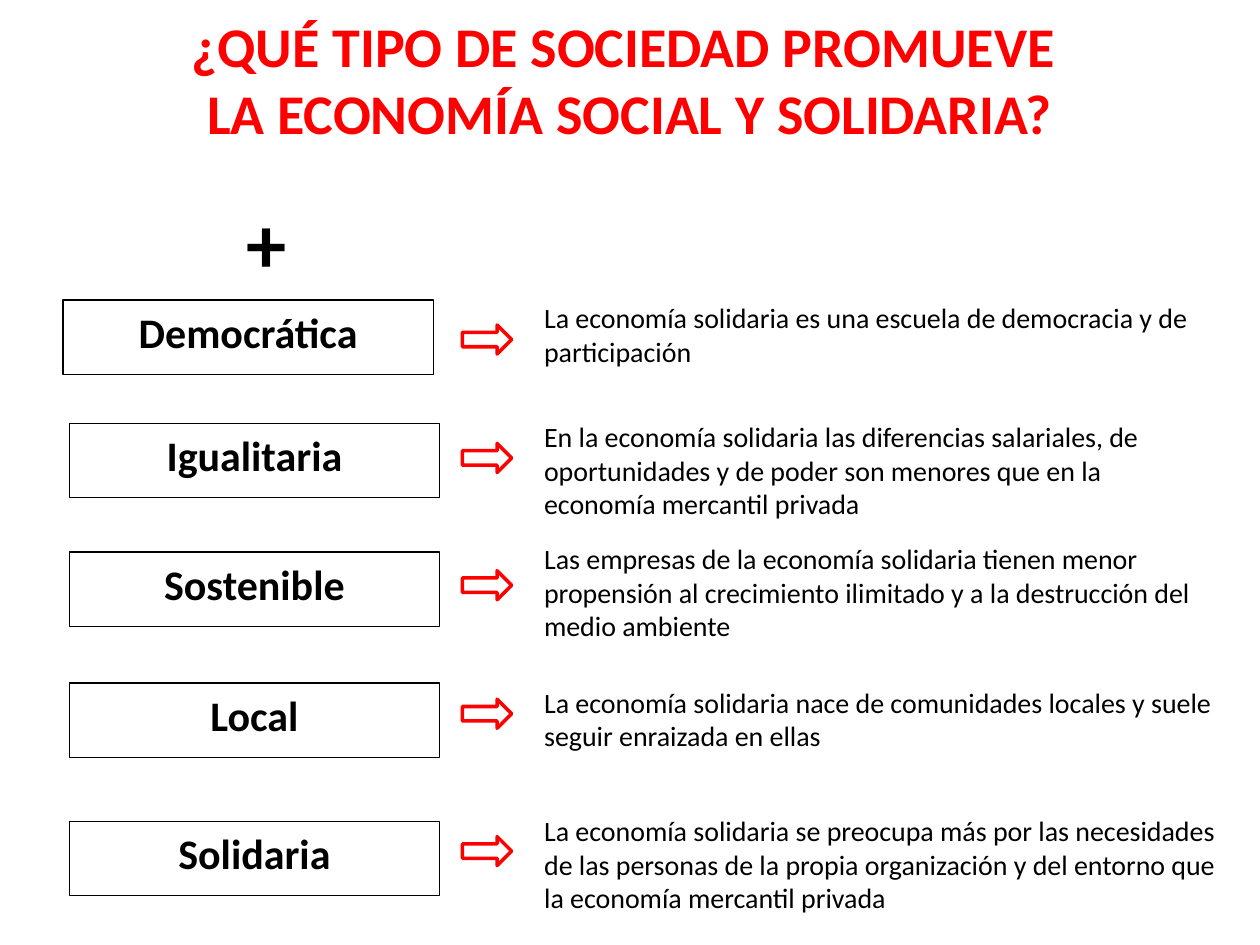
from typing import NamedTuple

from pptx import Presentation
from pptx.dml.color import RGBColor
from pptx.enum.shapes import MSO_SHAPE
from pptx.enum.text import MSO_ANCHOR, PP_ALIGN
from pptx.util import Pt

PX = 9144  # EMU per px, 100 px to the inch
RED = RGBColor(0xFF, 0, 0)
BLACK = RGBColor(0, 0, 0)
FONT = "Calibri"
RECT, ARROW = MSO_SHAPE.RECTANGLE, MSO_SHAPE.RIGHT_ARROW
TOP, MIDDLE = MSO_ANCHOR.TOP, MSO_ANCHOR.MIDDLE
LEFT, CENTER = PP_ALIGN.LEFT, PP_ALIGN.CENTER


class Box(NamedTuple):
    left: int
    top: int
    width: int
    height: int

    def emu(self) -> list[int]:
        return [side * PX for side in self]


class Trait(NamedTuple):
    name: str
    box: Box
    arrow_top: int
    detail: str
    area: Box


TRAITS = [
    Trait("Democrática", Box(50, 238, 294, 59), 258,
          "La economía solidaria es una escuela de democracia y de participación",
          Box(422, 234, 547, 64)),
    Trait("Igualitaria", Box(55, 336, 294, 59), 352,
          "En la economía solidaria las diferencias salariales, de oportunidades "
          "y de poder son menores que en la economía mercantil privada",
          Box(422, 328, 547, 91)),
    Trait("Sostenible", Box(55, 438, 294, 59), 453,
          "Las empresas de la economía solidaria tienen menor propensión al "
          "crecimiento ilimitado y a la destrucción del medio ambiente",
          Box(422, 425, 547, 91)),
    Trait("Local", Box(55, 542, 294, 59), 555,
          "La economía solidaria nace de comunidades locales y suele seguir "
          "enraizada en ellas",
          Box(422, 539, 555, 64)),
    Trait("Solidaria", Box(55, 652, 294, 59), 664,
          "La economía solidaria se preocupa más por las necesidades de las "
          "personas de la propia organización y del entorno que la economía "
          "mercantil privada",
          Box(422, 641, 555, 91)),
]


def write(shape, text: str, *, size: int, color: RGBColor = BLACK,
          bold: bool = False, align=LEFT, anchor=TOP, before: float = 0) -> None:
    frame = shape.text_frame
    frame.word_wrap = True
    frame.vertical_anchor = anchor
    frame.text = text
    para = frame.paragraphs[0]
    para.alignment = align
    para.space_before = Pt(before)
    for run in para.runs:
        font = run.font
        font.name, font.size, font.bold = FONT, Pt(size), bold
        font.color.rgb = color


def add_text(slide, box: Box, text: str, **style) -> None:
    write(slide.shapes.add_textbox(*box.emu()), text, **style)


def add_outline(slide, kind, box: Box, color: RGBColor, weight: float):
    shape = slide.shapes.add_shape(kind, *box.emu())
    shape.shadow.inherit = False
    shape.fill.background()
    shape.line.color.rgb = color
    shape.line.width = Pt(weight)
    return shape


def add_trait(slide, trait: Trait) -> None:
    label = add_outline(slide, RECT, trait.box, BLACK, 0.75)
    write(label, trait.name, size=24, bold=True, align=CENTER, before=4.8)
    add_text(slide, trait.area, trait.detail, size=16)
    add_outline(slide, ARROW, Box(367, trait.arrow_top, 39, 23), RED, 2)


def main() -> None:
    deck = Presentation()
    deck.slide_width, deck.slide_height = 1000 * PX, 750 * PX
    slide = deck.slides.add_slide(deck.slide_layouts[5])

    title = slide.shapes.title
    title.left, title.top, title.width, title.height = Box(0, 0, 1000, 125).emu()
    write(title, "¿QUÉ TIPO DE SOCIEDAD PROMUEVE \vLA ECONOMÍA SOCIAL Y SOLIDARIA?",
          size=32, color=RED, bold=True, align=CENTER, anchor=MIDDLE)

    add_text(slide, Box(102, 148, 219, 88), "+", size=46, bold=True, align=CENTER)
    for trait in TRAITS:
        add_trait(slide, trait)
    deck.save("out.pptx")


if __name__ == "__main__":
    main()
